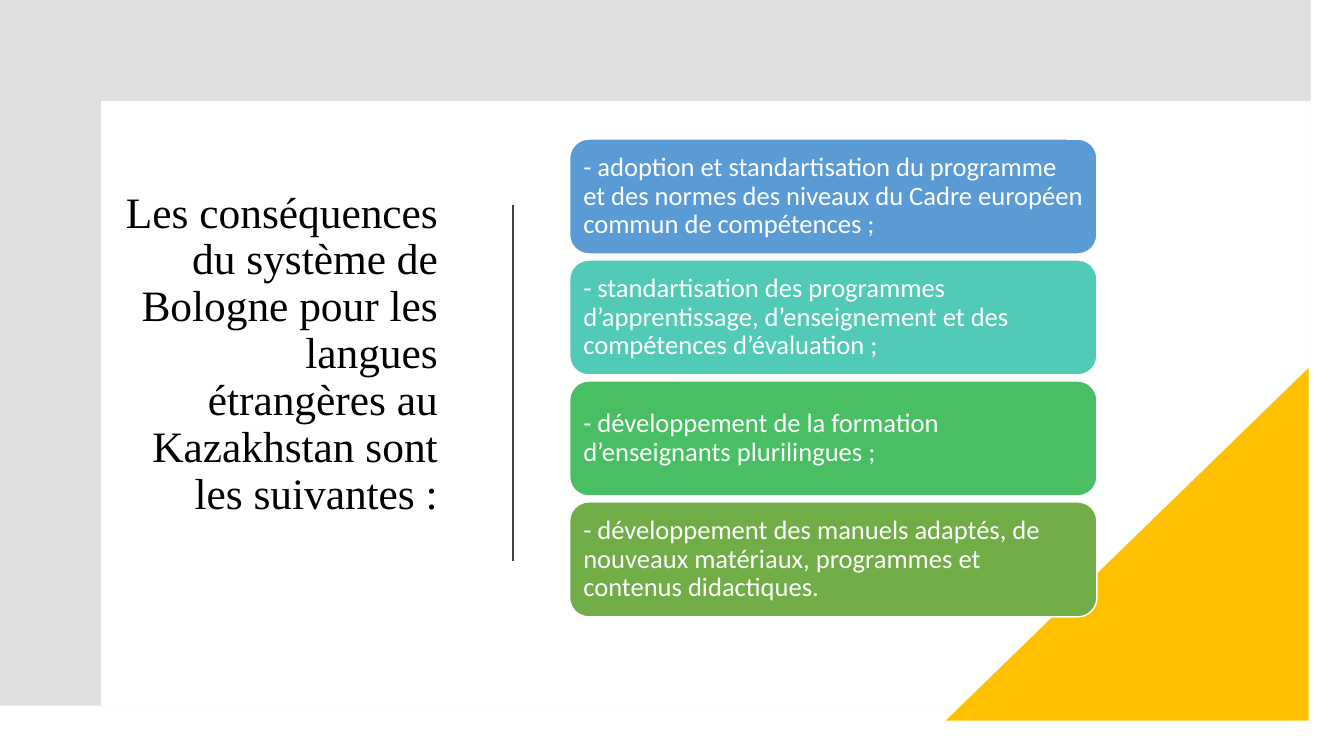
from pptx import Presentation
from pptx import util as u
from pptx.dml.color import RGBColor
from pptx.enum import shapes, text
from pptx.oxml.ns import qn
from lxml import etree

# Content
TITLE = ("Les conséquences du système de Bologne pour les langues "
         "étrangères au Kazakhstan sont les suivantes :")
CARDS = [
    ("- adoption et standartisation du programme et des normes des niveaux "
     "du Cadre européen commun de compétences ;", RGBColor(0x5B, 0x9B, 0xD5)),
    ("- standartisation des programmes d’apprentissage, d’enseignement et "
     "des compétences d’évaluation ;", RGBColor(0x52, 0xCA, 0xB8)),
    ("- développement de la formation d’enseignants plurilingues ;",
     RGBColor(0x49, 0xBF, 0x64)),
    ("- développement des manuels adaptés, de nouveaux matériaux, programmes "
     "et contenus didactiques.", RGBColor(0x70, 0xAD, 0x47)),
]
BLACK = RGBColor(0, 0, 0)
WHITE = RGBColor(0xFF, 0xFF, 0xFF)
GREY = RGBColor(0x80, 0x80, 0x80)
DARK = RGBColor(0x40, 0x40, 0x40)
GOLD = RGBColor(0xFF, 0xC0, 0x00)

# Layout in inches
W, H = 13.33, 7.5
MARGIN = 0.35
RIGHT, BOTTOM = W - MARGIN, H - MARGIN
SIDE, BAND = 0.35, 0.33  # frame thickness: sides, top and bottom
CORNER_W, CORNER_H = 3.6, 3.5
CARD_X, CARD_Y, CARD_W, CARD_H, PITCH = 5.65, 1.38, 5.23, 1.14, 1.2


def write(sp, words, font, size, color, align, insets):
    tf = sp.text_frame
    tf.word_wrap = True
    tf.vertical_anchor = text.MSO_ANCHOR.MIDDLE
    (tf.margin_left, tf.margin_top,
     tf.margin_right, tf.margin_bottom) = map(u.Inches, insets)
    p = tf.paragraphs[0]
    p.alignment = align
    p.line_spacing = 0.9
    r = p.add_run()
    r.text = words
    r.font.name, r.font.size = font, u.Pt(size)
    r.font.color.rgb = color


def paint(sp, color):
    sp.shadow.inherit = False
    sp.fill.solid()
    sp.fill.fore_color.rgb = color
    sp.line.fill.background()


prs = Presentation()
prs.slide_width, prs.slide_height = u.Inches(W), u.Inches(H)
s = prs.slides.add_slide(prs.slide_layouts[6])

# Grey frame, cut off at the lower right
frame = [
    (MARGIN, MARGIN), (RIGHT, MARGIN), (RIGHT, 3.49), (RIGHT - SIDE, 3.83),
    (RIGHT - SIDE, MARGIN + BAND), (MARGIN + SIDE, MARGIN + BAND),
    (MARGIN + SIDE, BOTTOM - BAND), (9.56, BOTTOM - BAND),
    (9.21, BOTTOM), (MARGIN, BOTTOM),
]
fb = s.shapes.build_freeform(*frame[0], scale=u.Inches(1))
fb.add_line_segments(frame[1:], close=True)
sp = fb.convert_to_shape()
paint(sp, GREY)
clr = sp.fill._xPr.find(qn("a:solidFill"))[0]
etree.SubElement(clr, qn("a:alpha"), val="25000")

# Gold corner
sp = s.shapes.add_shape(
    shapes.MSO_SHAPE.RIGHT_TRIANGLE, u.Inches(RIGHT - CORNER_W),
    u.Inches(BOTTOM - CORNER_H), u.Inches(CORNER_W), u.Inches(CORNER_H))
paint(sp, GOLD)
sp._element.spPr.find(qn("a:xfrm")).set("flipH", "1")

# Title, raised by a deeper bottom inset
sp = s.shapes.add_textbox(*map(u.Inches, (1.1, 1.3, 3.34, 4.9)))
write(sp, TITLE, "Times New Roman", 31, BLACK, text.PP_ALIGN.RIGHT,
      (0.1, 0.05, 0.1, 0.51))

# Divider
ln = s.shapes.add_connector(shapes.MSO_CONNECTOR.STRAIGHT,
                            *map(u.Inches, (5.09, 2.03, 5.09, 5.57)))
ln.line.color.rgb, ln.line.width = DARK, u.Pt(1.5)
etree.SubElement(ln._element.spPr, qn("a:effectLst"))

# Cards
for i, (words, color) in enumerate(CARDS):
    sp = s.shapes.add_shape(
        shapes.MSO_SHAPE.ROUNDED_RECTANGLE, u.Inches(CARD_X),
        u.Inches(CARD_Y + i * PITCH), u.Inches(CARD_W), u.Inches(CARD_H))
    paint(sp, color)
    sp.line.color.rgb, sp.line.width = WHITE, u.Pt(1)
    write(sp, words, "Calibri", 19, WHITE, text.PP_ALIGN.LEFT, [0.08] * 4)

prs.save("out.pptx")
